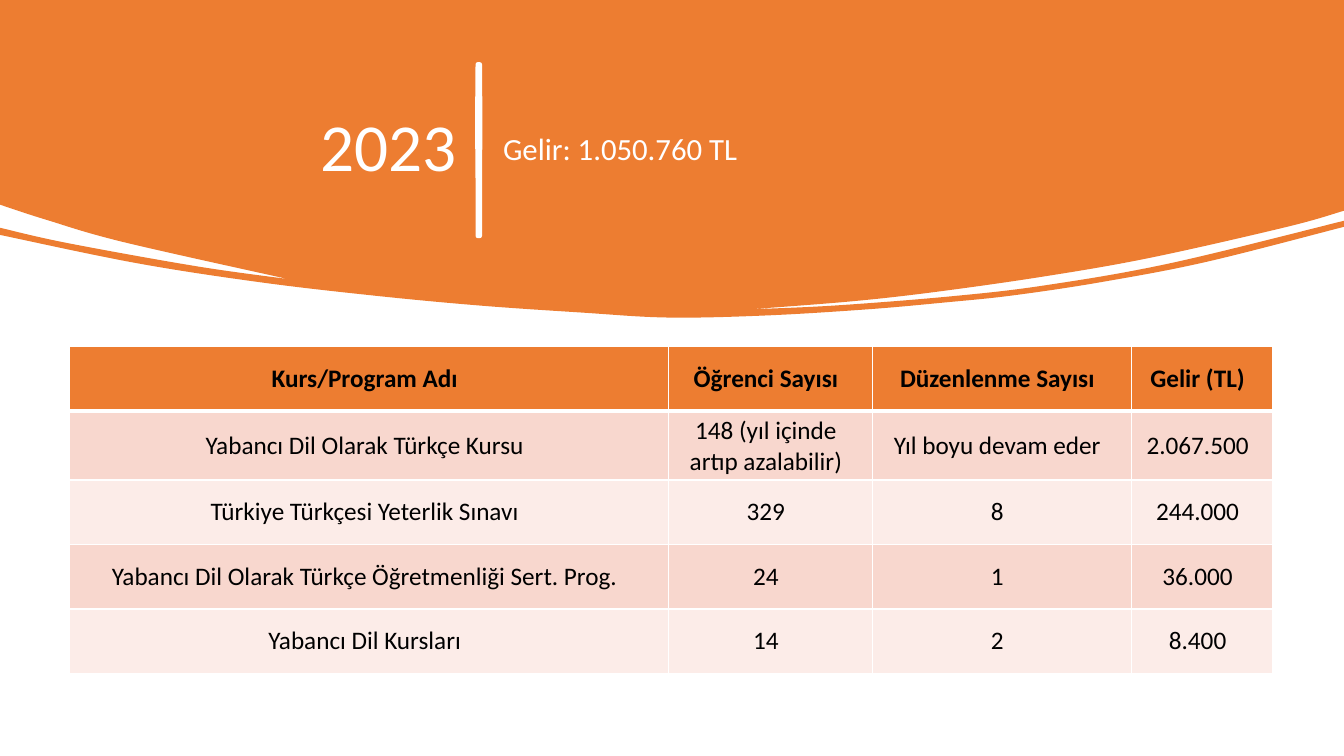
from lxml.etree import SubElement
from pptx import Presentation
from pptx.dml.color import RGBColor
from pptx.enum.text import MSO_ANCHOR as Anchor, PP_ALIGN as Align
from pptx.oxml.ns import qn
from pptx.util import Pt

YEAR = "2023"
INCOME = "Gelir: 1.050.760 TL"
COURSES = [
    ("Kurs/Program Adı", "Öğrenci Sayısı", "Düzenlenme Sayısı", "Gelir (TL)"),
    ("Yabancı Dil Olarak Türkçe Kursu", "148 (yıl içinde artıp azalabilir)",
     "Yıl boyu devam eder", "2.067.500"),
    ("Türkiye Türkçesi Yeterlik Sınavı", "329", "8", "244.000"),
    ("Yabancı Dil Olarak Türkçe Öğretmenliği Sert. Prog.", "24", "1", "36.000"),
    ("Yabancı Dil Kursları", "14", "2", "8.400"),
]
COLORS = {"orange": "ED7D31", "dark band": "F8D7CE", "light band": "FCECE8",
          "white": "FFFFFF", "black": "000000"}
FONT = "Calibri"
WIDTH, HEIGHT = 960, 540
MARGIN = 49.9
COLUMN_WIDTHS = [427.7, 145.5, 185.2, 100.9]
TABLE_TOP, ROW_HEIGHT = 247.7, 46.1
HEADING_TOP, HEADING_HEIGHT = 49.7, 115.2

# Edges of each outline, clockwise, each a smooth curve through its points
HEADER_EDGES = [
    [(0, 0)],
    [(WIDTH, 0)],
    [(WIDTH, 150.5), (919.4, 162), (820.8, 184.3), (742.3, 198), (666, 208.8),
     (607.7, 215.3), (535, 221)],
    [(535, 221), (597, 218.2), (679, 211.7), (746.6, 203.8), (836.6, 187.9),
     (WIDTH, 157.7)],
    [(WIDTH, 162), (861, 187.2), (786, 201.6), (723.6, 211), (675.4, 216),
     (619, 221), (545.8, 225.4), (476.6, 226.8), (414.7, 223.2), (342, 218.2),
     (265.7, 211), (185.8, 201.6), (97.2, 187.9), (0, 167.8)],
    [(0, 162.7), (47.5, 173.5), (139.7, 190.1), (206, 199.4)],
    [(206, 199.4), (87.8, 172.8), (33.1, 157), (0, 146.2)],
]
DIVIDER_EDGES = [
    [(342.7, 46), (342.9, 89), (342.7, 131), (342.7, 168.5)],
    [(341.3, 168.5), (341.3, 130), (341, 89), (341.3, 46)],
]


def rgb(name):
    return RGBColor.from_string(COLORS[name])


def curve_edges(shape, edges):
    """Turn the straight segments within each edge into Bézier curves."""
    path = next(shape._element.iter(qn("a:path")))
    segments = list(path)
    points = [(int(pt.get("x")), int(pt.get("y"))) for pt in path.iter(qn("a:pt"))]
    first = 0
    for edge in edges:
        last = first + len(edge) - 1
        for i in range(first, last):
            before, start = points[max(i - 1, first)], points[i]
            end, after = points[i + 1], points[min(i + 2, last)]
            leave = [s + (e - b) / 6 for b, s, e in zip(before, start, end)]
            arrive = [e - (a - s) / 6 for s, e, a in zip(start, end, after)]
            segment = segments[i + 1]
            curve = segment.makeelement(qn("a:cubicBezTo"))
            for x, y in (leave, arrive, end):
                SubElement(curve, qn("a:pt"), x=str(round(x)), y=str(round(y)))
            path.replace(segment, curve)
        first = last + 1


def add_outline(slide, edges, color, line_width=None):
    points = [(x * 100, y * 100) for edge in edges for x, y in edge]
    builder = slide.shapes.build_freeform(*points[0], scale=Pt(1) / 100)
    builder.add_line_segments(points[1:], close=True)
    shape = builder.convert_to_shape()
    curve_edges(shape, edges)
    shape.shadow.inherit = False
    shape.fill.solid()
    shape.fill.fore_color.rgb = rgb(color)
    if line_width:
        shape.line.color.rgb = rgb(color)
        shape.line.width = Pt(line_width)
    else:
        shape.line.fill.background()


def write(frame, text, size, color, align=Align.LEFT, bold=False, spacing=None):
    frame.word_wrap = True
    paragraph = frame.paragraphs[0]
    paragraph.alignment = align
    paragraph.line_spacing = spacing
    run = paragraph.add_run()
    run.text = text
    run.font.name, run.font.size, run.font.bold = FONT, Pt(size), bold
    run.font.color.rgb = rgb(color)


def add_heading(slide, text, left, width, **text_format):
    box = slide.shapes.add_textbox(Pt(left), Pt(HEADING_TOP), Pt(width), Pt(HEADING_HEIGHT))
    box.text_frame.vertical_anchor = Anchor.MIDDLE
    write(box.text_frame, text, color="white", spacing=0.9, **text_format)


def set_borders(cell, **widths):
    properties = cell._tc.get_or_add_tcPr()
    for side, width in widths.items():
        line = SubElement(properties, qn(f"a:ln{side}"), w=str(Pt(width)))
        fill = SubElement(line, qn("a:solidFill"))
        SubElement(fill, qn("a:srgbClr"), val=COLORS["white"])


def add_course_table(slide):
    table = slide.shapes.add_table(
        len(COURSES), len(COLUMN_WIDTHS), Pt(MARGIN), Pt(TABLE_TOP),
        Pt(sum(COLUMN_WIDTHS)), Pt(ROW_HEIGHT * len(COURSES))).table
    for column, width in zip(table.columns, COLUMN_WIDTHS):
        column.width = Pt(width)
    for row, texts in enumerate(COURSES):
        table.rows[row].height = Pt(ROW_HEIGHT)
        header = row == 0
        band = "orange" if header else "dark band" if row % 2 else "light band"
        for column, text in enumerate(texts):
            cell = table.cell(row, column)
            set_borders(cell, L=1, R=1, T=3 if row == 1 else 1, B=3 if header else 1)
            cell.fill.solid()
            cell.fill.fore_color.rgb = rgb(band)
            cell.vertical_anchor = Anchor.MIDDLE
            cell.margin_left, cell.margin_right = Pt(0), Pt(6.5)
            cell.margin_top = cell.margin_bottom = Pt(2.9)
            write(cell.text_frame, text, 18, "black", Align.CENTER, bold=header)


def main():
    presentation = Presentation()
    presentation.slide_width, presentation.slide_height = Pt(WIDTH), Pt(HEIGHT)
    slide = presentation.slides.add_slide(presentation.slide_layouts[6])
    add_outline(slide, HEADER_EDGES, "orange")
    add_heading(slide, YEAR, MARGIN, 283.5, size=48, align=Align.RIGHT)
    add_outline(slide, DIVIDER_EDGES, "white", line_width=3.25)
    add_heading(slide, INCOME, 352.3, 557, size=22)
    add_course_table(slide)
    presentation.save("out.pptx")


if __name__ == "__main__":
    main()
